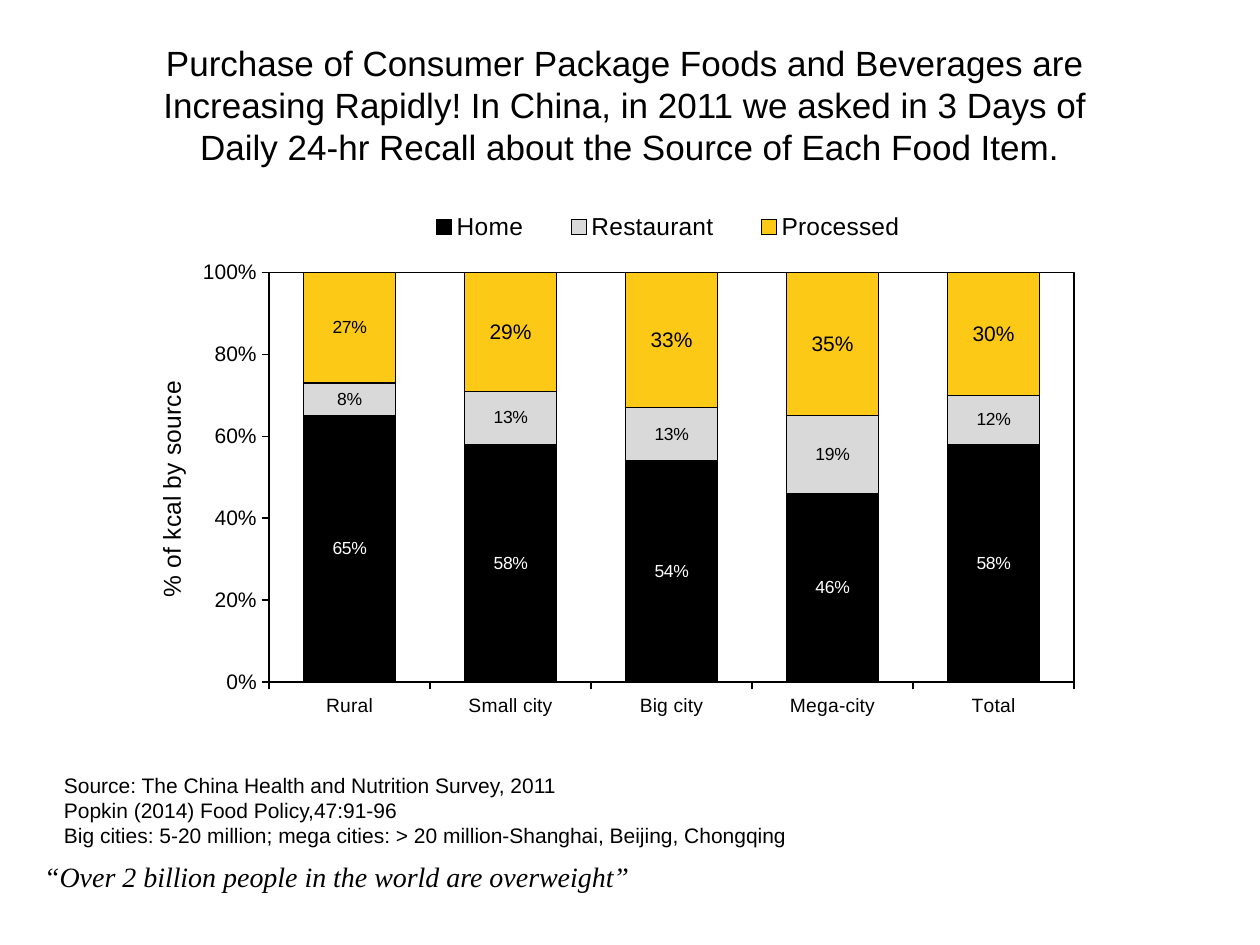
"""Build a slide on the sources of calories in China with a stacked column chart."""
from lxml.etree import SubElement
from pptx import Presentation
from pptx.chart.data import CategoryChartData
from pptx.dml.color import RGBColor
from pptx.enum.chart import XL_CHART_TYPE as ChartType, XL_LABEL_POSITION as LabelPos
from pptx.enum.chart import XL_LEGEND_POSITION as LegendPos, XL_TICK_MARK as Tick
from pptx.enum.text import MSO_ANCHOR as Anchor, PP_ALIGN as Align
from pptx.oxml import parse_xml
from pptx.oxml.ns import nsdecls, qn
from pptx.util import Cm, Pt

BLACK = RGBColor(0x00, 0x00, 0x00)
WHITE = RGBColor(0xFF, 0xFF, 0xFF)
GREY = RGBColor(0xD9, 0xD9, 0xD9)
YELLOW = RGBColor(0xFC, 0xC9, 0x17)


def add_text(page, left, top, width, height, lines, size, name="Arial"):
    box = page.shapes.add_textbox(Cm(left), Cm(top), Cm(width), Cm(height))
    frame = box.text_frame
    frame.word_wrap = True
    frame.text = "\n".join(lines)
    for para in frame.paragraphs:
        para.font.size = Pt(size)
        para.font.name = name
        para.font.color.rgb = BLACK
    return frame


def place(parent, index, target, **sizes):
    for old in parent.findall(qn("c:layout")):
        parent.remove(old)
    layout = parse_xml(f"<c:layout {nsdecls('c')}><c:manualLayout/></c:layout>")
    settings = {"layoutTarget": target} if target else {}
    settings |= {"xMode": "edge", "yMode": "edge"} | sizes
    for key, value in settings.items():
        SubElement(layout[0], qn(f"c:{key}")).set("val", str(value))
    parent.insert(index, layout)


deck = Presentation()
deck.slide_width, deck.slide_height = Cm(25.4), Cm(19.05)
page = deck.slides.add_slide(deck.slide_layouts[6])

quote = add_text(page, 0, 16.94, 25.4, 1.47,
                 ["“Over 2 billion people in the world are overweight”"], 16, "Times New Roman")
quote.vertical_anchor = Anchor.MIDDLE
quote.paragraphs[0].font.italic = True
quote.paragraphs[0]._p.get_or_add_pPr().set("indent", str(Cm(0.64)))

data = CategoryChartData(number_format="0%")
data.categories = ["Rural", "Small city", "Big city", "Mega-city", "Total"]
data.add_series("Home", [0.65, 0.58, 0.54, 0.46, 0.58])
data.add_series("Restaurant", [0.08, 0.13, 0.13, 0.19, 0.12])
data.add_series("Processed ", [0.27, 0.29, 0.33, 0.35, 0.30])
chart = page.shapes.add_chart(ChartType.COLUMN_STACKED, Cm(3.05), Cm(3.43),
                              Cm(19.79), Cm(12.14), data).chart
chart.has_title = False
chart.font.name = "Arial"
chart.font.size = Pt(18)
chart.font.color.rgb = BLACK

plot = chart.plots[0]
plot.gap_width = 75
plot.overlap = 100
plot.vary_by_categories = False
styles = [(BLACK, WHITE, 10), (GREY, BLACK, 10), (YELLOW, BLACK, 12)]
for series, (fill, ink, size) in zip(plot.series, styles):
    series.format.fill.solid()
    series.format.fill.fore_color.rgb = fill
    series.format.line.color.rgb = BLACK
    series.format.line.width = Pt(0.75)
    labels = series.data_labels
    labels.show_value = True
    labels.position = LabelPos.CENTER
    labels.number_format = "0%"
    labels.number_format_is_linked = False
    labels.font.size = Pt(size)
    labels.font.color.rgb = ink
rural_label = plot.series[2].points[0].data_label
rural_label.font.size = Pt(10)
rural_label.font.color.rgb = BLACK
rural_label.position = LabelPos.CENTER

for axis, size in [(chart.category_axis, 11), (chart.value_axis, 12)]:
    axis.has_major_gridlines = False
    axis.major_tick_mark = Tick.OUTSIDE
    axis.minor_tick_mark = Tick.NONE
    axis.tick_labels.font.size = Pt(size)
    axis.format.line.color.rgb = BLACK
    axis.format.line.width = Pt(0.75)
scale = chart.value_axis
scale.minimum_scale, scale.maximum_scale, scale.major_unit = 0, 1, 0.2
scale.tick_labels.number_format = "0%"
scale.tick_labels.number_format_is_linked = False
caption = scale.axis_title.text_frame
caption.text = "% of kcal by source"
caption.paragraphs[0].font.size = Pt(14)
caption.paragraphs[0].font.bold = False

chart.has_legend = True
chart.legend.position = LegendPos.TOP
chart.legend.include_in_layout = False
chart.legend.font.size = Pt(14)
place(chart.legend._element, 1, None, x=0.25, y=0.06, w=0.56, h=0.07)

plot_area = chart._chartSpace.chart.plotArea
place(plot_area, 0, "inner", x=0.12, y=0.17, w=0.82, h=0.68)
plot_area.append(parse_xml(
    f'<c:spPr {nsdecls("c", "a")}><a:noFill/><a:ln w="{Pt(0.75)}"><a:solidFill>'
    f'<a:srgbClr val="{BLACK}"/></a:solidFill></a:ln></c:spPr>'))

add_text(page, 1.04, 15.44, 18.49, 1.8, [
    "Source: The China Health and Nutrition Survey, 2011",
    "Popkin (2014) Food Policy,47:91-96",
    "Big cities: 5-20 million; mega cities: > 20 million-Shanghai, Beijing, Chongqing",
], 12)

title = add_text(page, 1.27, 0.71, 22.86, 3.18, [
    "Purchase of Consumer Package Foods and Beverages are \v"
    "Increasing Rapidly! In China, in 2011 we asked in 3 Days of \v"
    "Daily 24-hr Recall about the Source of Each Food Item.",
], 20)
title.paragraphs[0].alignment = Align.CENTER

deck.save("out.pptx")
